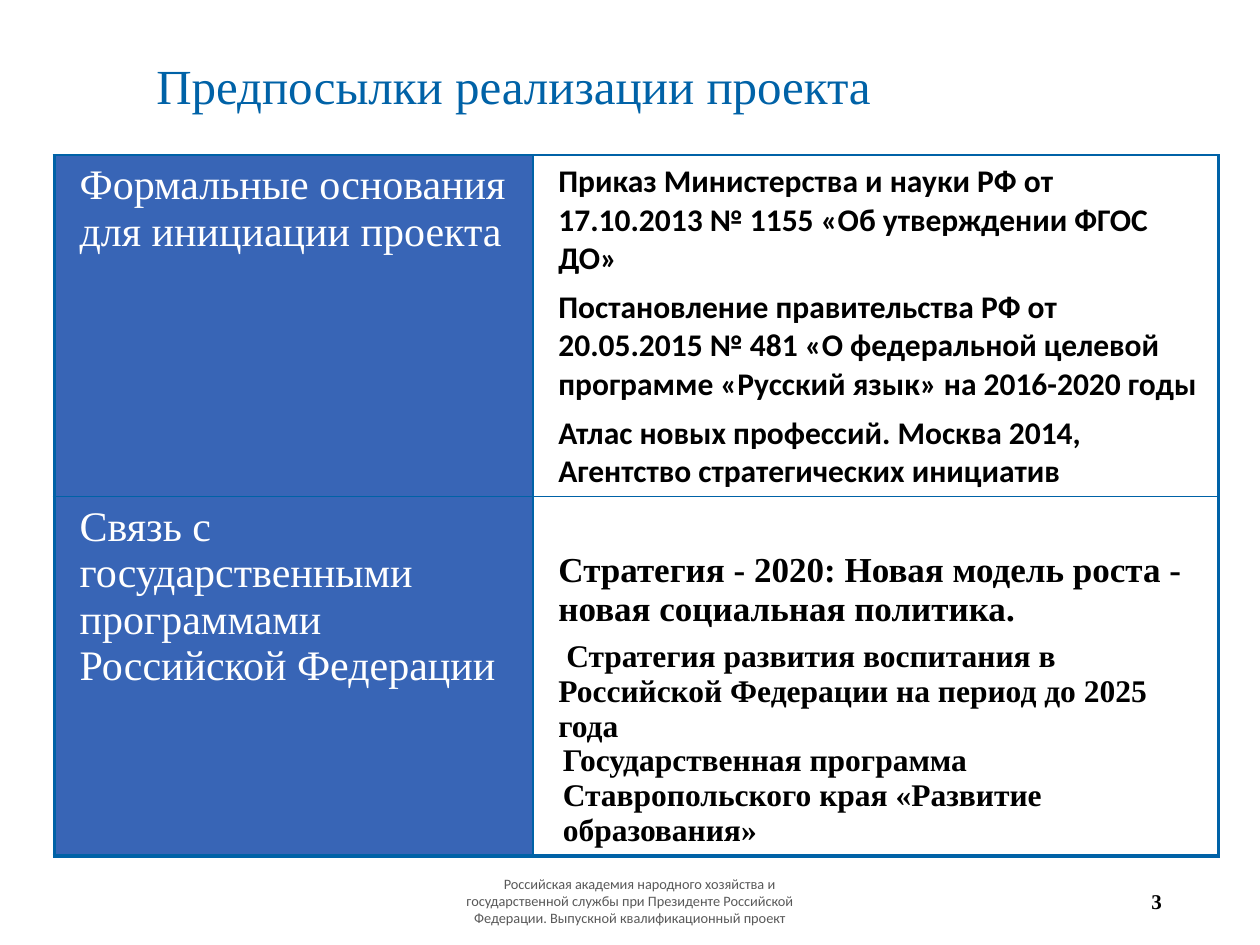
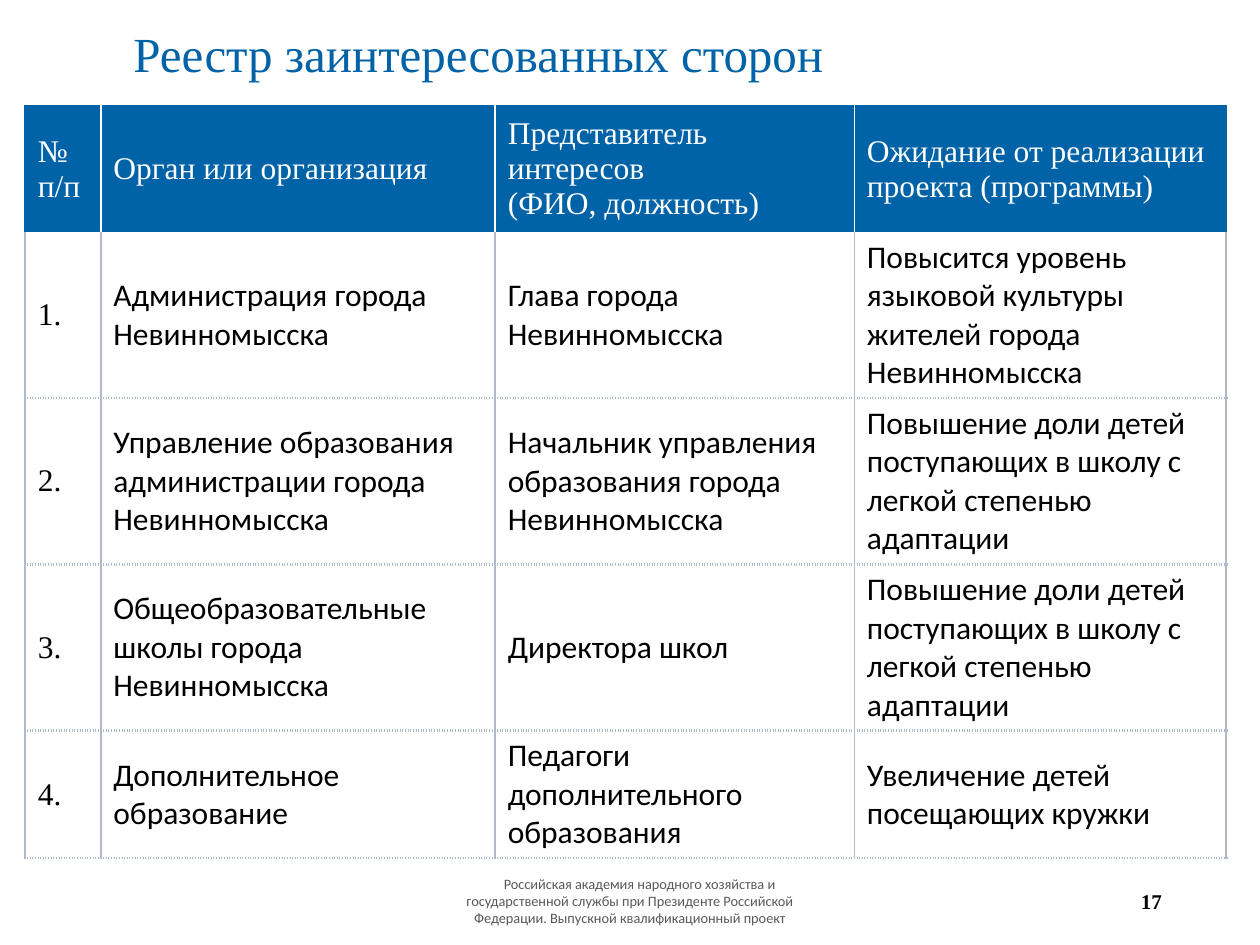
from dataclasses import dataclass

from lxml import etree
from pptx import Presentation
from pptx.dml.color import RGBColor
from pptx.enum.text import MSO_ANCHOR, PP_ALIGN
from pptx.oxml.ns import qn
from pptx.util import Pt

LEFT, CENTER, RIGHT = PP_ALIGN.LEFT, PP_ALIGN.CENTER, PP_ALIGN.RIGHT
TOP, MIDDLE, BOTTOM = MSO_ANCHOR.TOP, MSO_ANCHOR.MIDDLE, MSO_ANCHOR.BOTTOM


@dataclass(frozen=True)
class Theme:
    serif: str = "Times New Roman"
    sans: str = "Calibri"
    blue: str = "0062A7"
    label_blue: str = "3865B6"
    grid: str = "B0B9CB"
    gray: str = "595959"
    black: str = "000000"
    white: str = "FFFFFF"
    title_size: float = 28
    label_size: float = 24
    lead_size: float = 20
    body_size: float = 18
    number_size: float = 12
    footer_size: float = 8.2


THEME = Theme()


def write_text(frame, text, size=THEME.body_size, font=THEME.serif, color=THEME.black,
               bold=False, align=LEFT, line_spacing=None, before=0, indent=0, first_line=0):
    """Add one paragraph to the frame, filling its empty first paragraph if there is one."""
    paragraph = frame.add_paragraph() if frame.text else frame.paragraphs[0]
    paragraph.text = text
    paragraph.alignment = align
    paragraph.space_before = Pt(before)
    if line_spacing:
        paragraph.line_spacing = line_spacing
    properties = paragraph._p.get_or_add_pPr()
    properties.set("marL", str(Pt(indent)))
    properties.set("indent", str(Pt(first_line)))
    for run in paragraph.runs:
        run.font.size = Pt(size)
        run.font.name = font
        run.font.bold = bold
        run.font.color.rgb = RGBColor.from_string(color)


def format_cell(cell, fill, anchor, borders):
    """Borders are (color, width, dash) or None, in the order left, right, top, bottom."""
    cell.fill.solid()
    cell.fill.fore_color.rgb = RGBColor.from_string(fill)
    cell.vertical_anchor = anchor
    properties = cell._tc.get_or_add_tcPr()
    for position, (side, border) in enumerate(zip("LRTB", borders)):
        line = etree.Element(qn(f"a:ln{side}"))
        if border:
            color, width, dash = border
            line.set("w", str(Pt(width)))
            solid = etree.SubElement(line, qn("a:solidFill"))
            etree.SubElement(solid, qn("a:srgbClr"), val=color)
            etree.SubElement(line, qn("a:prstDash"), val=dash)
        else:
            etree.SubElement(line, qn("a:noFill"))
        properties.insert(position, line)


presentation = Presentation()
presentation.slide_width = Pt(720)
presentation.slide_height = Pt(540)

FOOTER = ("Российская академия народного хозяйства и государственной службы при "
          "Президенте Российской Федерации. Выпускной квалификационный проект")
FOOTER_BOX = (238.3, 500.4, 243.4, 28.8)
NUMBER_BOX = (509, 500.4, 162, 28.8)

# Title, title box, title indent, page number, table box, column widths, row heights
slide_plans = [
    ("Предпосылки реализации проекта", (61.2, 30.2, 548.6, 38.9), 21, "3",
     (31, 88.6), (273.6, 391.7), (195, 205.5)),
    ("Реестр заинтересованных сторон", (69.1, 20.9, 534.2, 30.2), 0, "17",
     (14.4, 60.5), (43.2, 225.4, 205.2, 212.4), (70.8, 95, 95, 95, 73)),
]

tables = []
for title, title_box, title_indent, number, corner, widths, heights in slide_plans:
    slide = presentation.slides.add_slide(presentation.slide_layouts[6])
    text_boxes = [
        (title, title_box, BOTTOM, dict(size=THEME.title_size, color=THEME.blue,
                                        line_spacing=0.9, indent=title_indent)),
        (FOOTER, FOOTER_BOX, MIDDLE, dict(size=THEME.footer_size, font=THEME.sans,
                                          color=THEME.gray, align=CENTER, first_line=11)),
        (number, NUMBER_BOX, MIDDLE, dict(size=THEME.number_size, bold=True, align=RIGHT)),
    ]
    for text, box, anchor, text_format in text_boxes:
        frame = slide.shapes.add_textbox(*map(Pt, box)).text_frame
        frame.word_wrap = True
        frame.vertical_anchor = anchor
        if text == FOOTER:
            frame.margin_left = frame.margin_right = Pt(10)
        write_text(frame, text, **text_format)

    table = slide.shapes.add_table(len(heights), len(widths), *map(Pt, corner),
                                   Pt(sum(widths)), Pt(sum(heights))).table
    table.first_row = table.horz_banding = False
    for column, width in zip(table.columns, widths):
        column.width = Pt(width)
    for row, height in zip(table.rows, heights):
        row.height = Pt(height)
    tables.append(table)

# Project background
background_table, stakeholder_table = tables
label = dict(size=THEME.label_size, color=THEME.white, indent=6.5)
order = dict(font=THEME.sans, bold=True, before=6, indent=6.5)
strategy = dict(bold=True, before=6, indent=6.5)
program = dict(bold=True, indent=9)
background = [
    [[("Формальные основания для инициации проекта", label)],
     [("Приказ Министерства и науки РФ от 17.10.2013 № 1155 «Об утверждении ФГОС ДО»", order),
      ("Постановление правительства РФ от 20.05.2015 № 481 «О федеральной целевой "
       "программе «Русский язык» на 2016-2020 годы", order),
      ("Атлас новых профессий. Москва 2014, Агентство стратегических инициатив", order)]],
    [[("Связь с государственными программами Российской Федерации", label)],
     [("Стратегия - 2020: Новая модель роста - новая социальная политика.",
       dict(strategy, size=THEME.lead_size)),
      ("Стратегия развития воспитания в Российской Федерации на период до 2025 года",
       dict(strategy, first_line=4.5)),
      ("Государственная программа", program),
      ("Ставропольского края «Развитие", program),
      ("образования»", program)]],
]
thin, thick = (THEME.blue, 1, "solid"), (THEME.blue, 2.25, "solid")
for row_index, row in enumerate(background):
    for column_index, paragraphs in enumerate(row):
        cell = background_table.cell(row_index, column_index)
        cell.margin_left = cell.margin_right = Pt(8)
        cell.margin_top = cell.margin_bottom = Pt(4.3)
        format_cell(cell, THEME.white if column_index else THEME.label_blue,
                    BOTTOM if row_index and column_index else TOP,
                    (thin if column_index else thick, thick if column_index else thin,
                     thin, thick if row_index else thin))
        for text, text_format in paragraphs:
            write_text(cell.text_frame, text, **text_format)

# Stakeholder register
stakeholders = [
    ("№\nп/п", "Орган или организация", "Представитель интересов\n(ФИО, должность)",
     "Ожидание от реализации проекта (программы)"),
    ("1.", "Администрация города Невинномысска", "Глава города Невинномысска",
     "Повысится уровень языковой культуры жителей города Невинномысска"),
    ("2.", "Управление образования администрации города Невинномысска",
     "Начальник управления образования города Невинномысска",
     "Повышение доли детей поступающих в школу с легкой степенью адаптации"),
    ("3.", "Общеобразовательные школы города Невинномысска", "Директора школ",
     "Повышение доли детей поступающих в школу с легкой степенью адаптации"),
    ("4.", "Дополнительное образование", "Педагоги дополнительного образования",
     "Увеличение детей посещающих кружки"),
]
divider = (THEME.white, 1, "solid")
side_line = (THEME.grid, 1, "solid")
dotted = (THEME.grid, 1.5, "sysDot")
last_column = len(stakeholders[0]) - 1
for row_index, row in enumerate(stakeholders):
    for column_index, text in enumerate(row):
        cell = stakeholder_table.cell(row_index, column_index)
        if row_index == 0:
            fill, color = THEME.blue, THEME.white
            borders = (divider if column_index else thin,
                       divider if column_index < last_column else thin, thin, None)
        else:
            fill, color = THEME.white, THEME.black
            borders = (side_line, side_line, dotted if row_index > 1 else None, dotted)
        format_cell(cell, fill, MIDDLE, borders)
        font = THEME.sans if row_index and column_index else THEME.serif
        write_text(cell.text_frame, text, font=font, color=color)

presentation.save("out.pptx")
